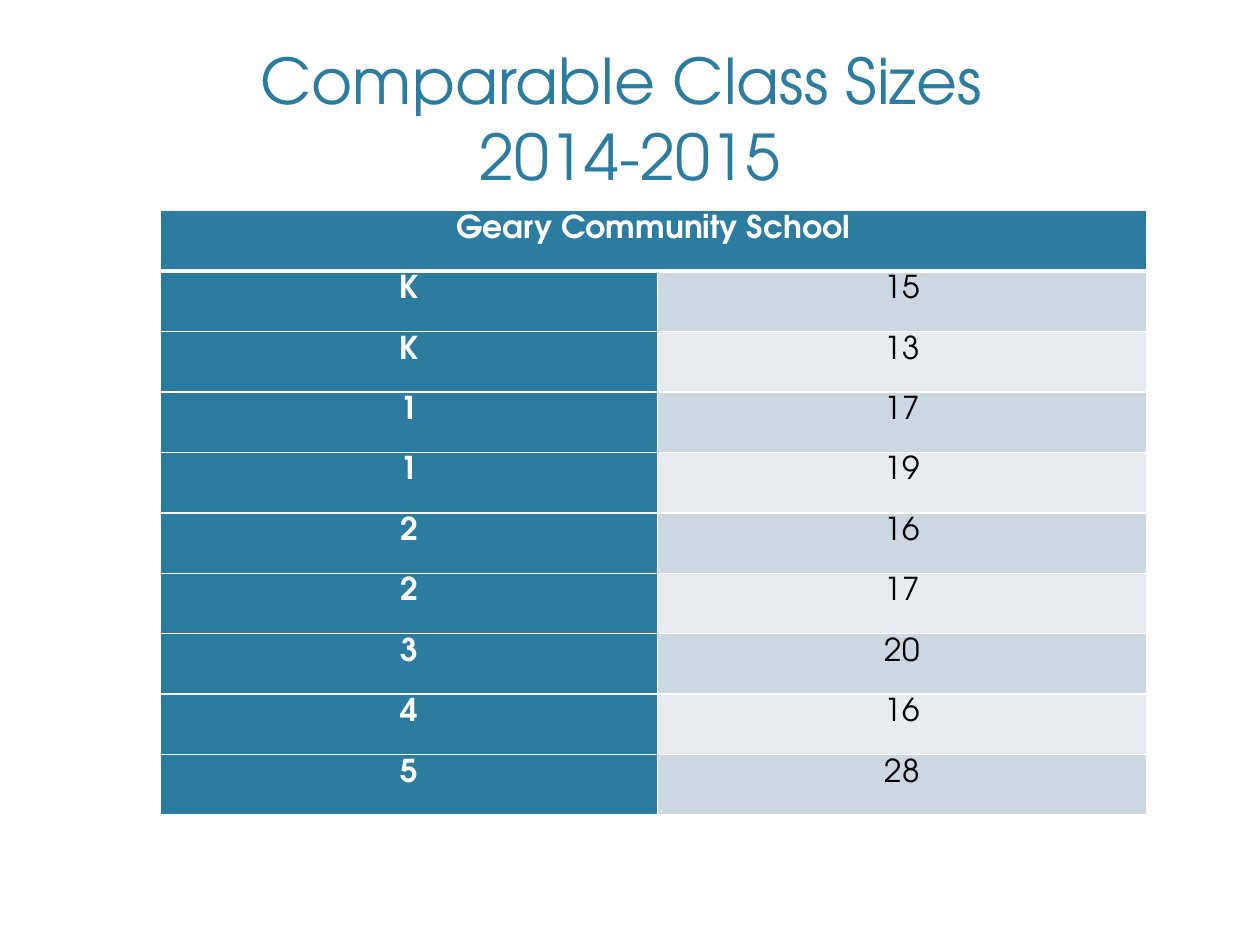
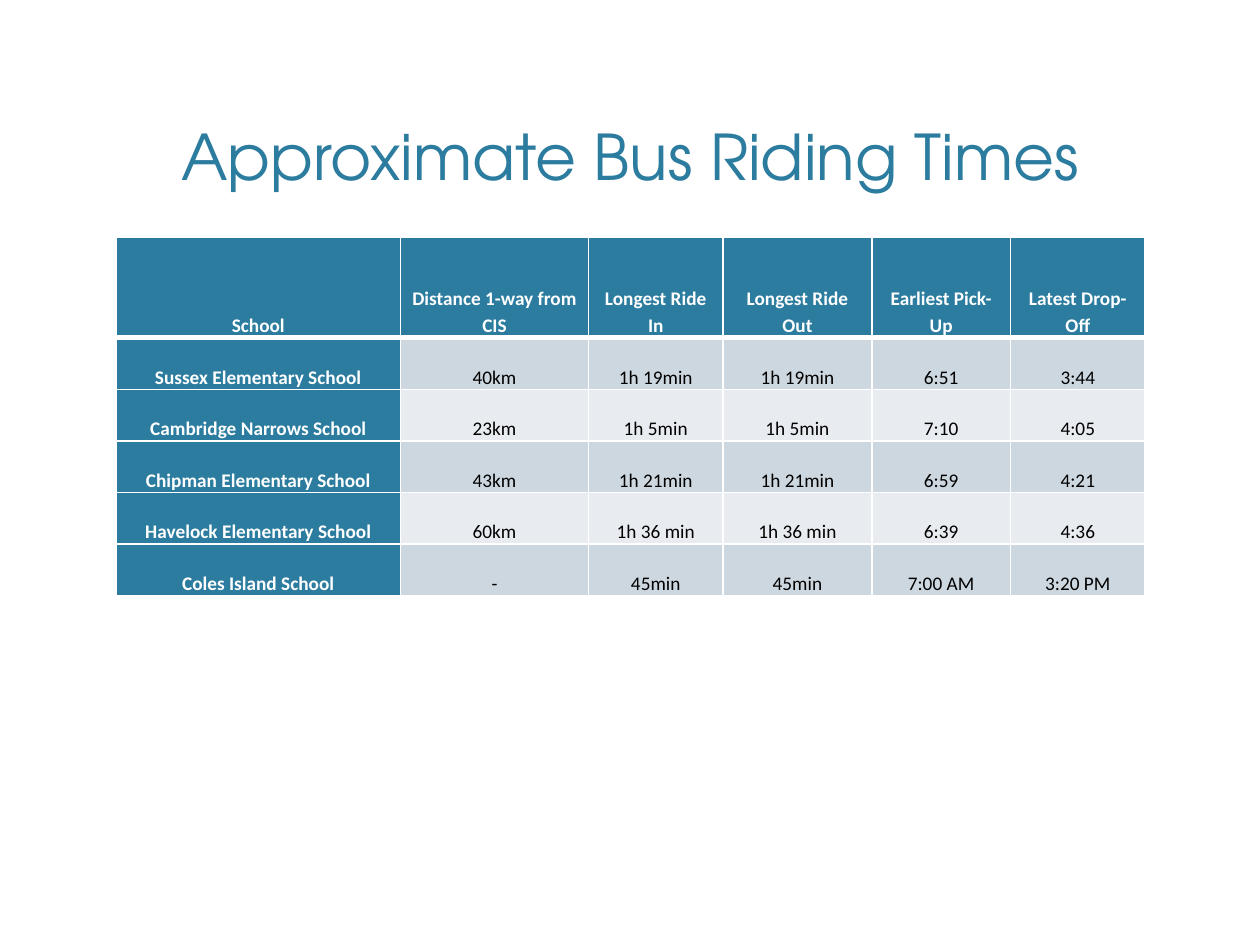
"""Build two slides on class sizes and bus riding times."""
from lxml import etree
from pptx import Presentation
from pptx.dml.color import RGBColor
from pptx.enum import text
from pptx.oxml import ns
from pptx.util import Inches, Pt

TEAL, WHITE, BLACK = "2C7C9F", "FFFFFF", "000000"
BANDS = ("CDD7DF", "E8ECF0")
HEAD_FONT, BODY_FONT = "TeX Gyre Adventor", "Calibri"

SIZES = [("Geary Community School", ""),
         ("K", "15"), ("K", "13"), ("1", "17"), ("1", "19"), ("2", "16"),
         ("2", "17"), ("3", "20"), ("4", "16"), ("5", "28")]
RIDES = [
    ("School", "Distance 1-way from CIS", "Longest Ride In",
     "Longest Ride Out", "Earliest Pick-Up", "Latest Drop-Off"),
    ("Sussex Elementary School", "40km", "1h 19min", "1h 19min", "6:51", "3:44"),
    ("Cambridge Narrows School", "23km", "1h 5min", "1h 5min", "7:10", "4:05"),
    ("Chipman Elementary School", "43km", "1h 21min", "1h 21min", "6:59", "4:21"),
    ("Havelock Elementary School", "60km", "1h 36 min", "1h 36 min", "6:39", "4:36"),
    ("Coles Island School", "-", "45min", "45min", "7:00 AM", "3:20 PM"),
]


def paint(target, color):
    """Give a fill or a font a solid colour."""
    if hasattr(target, "solid"):
        target.solid()
        target = target.fore_color
    else:
        target = target.color
    target.rgb = RGBColor.from_string(color)


def style(par, font, size, color, bold=False):
    """Centre a paragraph and set its font."""
    par.alignment = text.PP_ALIGN.CENTER
    par.font.name, par.font.size, par.font.bold = font, Pt(size), bold
    paint(par.font, color)


def add_slide(prs, title, top, height):
    """Add a slide with its title in place."""
    slide = prs.slides.add_slide(prs.slide_layouts[5])
    box = slide.shapes.title
    box.left, box.top = Inches(0.6), Inches(top)
    box.width, box.height = Inches(8.8), Inches(height)
    frame = box.text_frame
    frame.text = title
    frame.auto_size = text.MSO_AUTO_SIZE.NONE
    frame.vertical_anchor = text.MSO_ANCHOR.BOTTOM
    style(frame.paragraphs[0], HEAD_FONT, 36, TEAL)
    return slide


def edge(cell, side, width):
    """Draw one white border of a cell."""
    props = cell._tc.get_or_add_tcPr()
    line = etree.SubElement(props, ns.qn("a:ln" + side), w=str(Pt(width)))
    fill = etree.SubElement(line, ns.qn("a:solidFill"))
    etree.SubElement(fill, ns.qn("a:srgbClr"), val=WHITE)


def fill_cell(cell, words, row, col, font, size, anchor):
    """Write and format one cell by its place in the grid."""
    head = row == 0 or col == 0
    cell.text = words
    cell.margin_left = cell.margin_right = Inches(0.07)
    cell.margin_top = cell.margin_bottom = 0
    cell.vertical_anchor = anchor
    par = cell.text_frame.paragraphs[0]
    par.line_spacing = 1.15
    style(par, font, size, WHITE if head else BLACK, head)
    for side in "LRTB":
        thick = (row, side) in ((0, "B"), (1, "T"))
        edge(cell, side, 3 if thick else 1)
    paint(cell.fill, TEAL if head else BANDS[(row - 1) % 2])


def add_grid(slide, data, left, top, widths, heights, font, size, anchor):
    """Add a banded table with a header row and a header column."""
    frame = slide.shapes.add_table(
        len(data), len(widths), Inches(left), Inches(top),
        Inches(sum(widths)), Inches(sum(heights)))
    table = frame.table
    for column, width in zip(table.columns, widths):
        column.width = Inches(width)
    for line, height in zip(table.rows, heights):
        line.height = Inches(height)
    for row, record in enumerate(data):
        for col, words in enumerate(record):
            fill_cell(table.cell(row, col), words, row, col, font, size, anchor)
    return table


def main():
    """Build and save the deck."""
    prs = Presentation()
    prs.slide_width, prs.slide_height = Inches(10), Inches(7.5)

    slide = add_slide(prs, "Comparable Class Sizes \v2014-2015", 0.12, 1.46)
    table = add_grid(slide, SIZES, 1.27, 1.67, [3.95, 3.88], [0.48] * 10,
                     HEAD_FONT, 18, text.MSO_ANCHOR.TOP)
    table.cell(0, 0).merge(table.cell(0, 1))

    slide = add_slide(prs, "Approximate Bus Riding Times", 0.77, 0.81)
    add_grid(slide, RIDES, 0.92, 1.88, [2.26, 1.49, 1.07, 1.18, 1.1, 1.07],
             [0.8] + [0.41] * 5, BODY_FONT, 11, text.MSO_ANCHOR.BOTTOM)

    prs.save("out.pptx")


if __name__ == "__main__":
    main()
